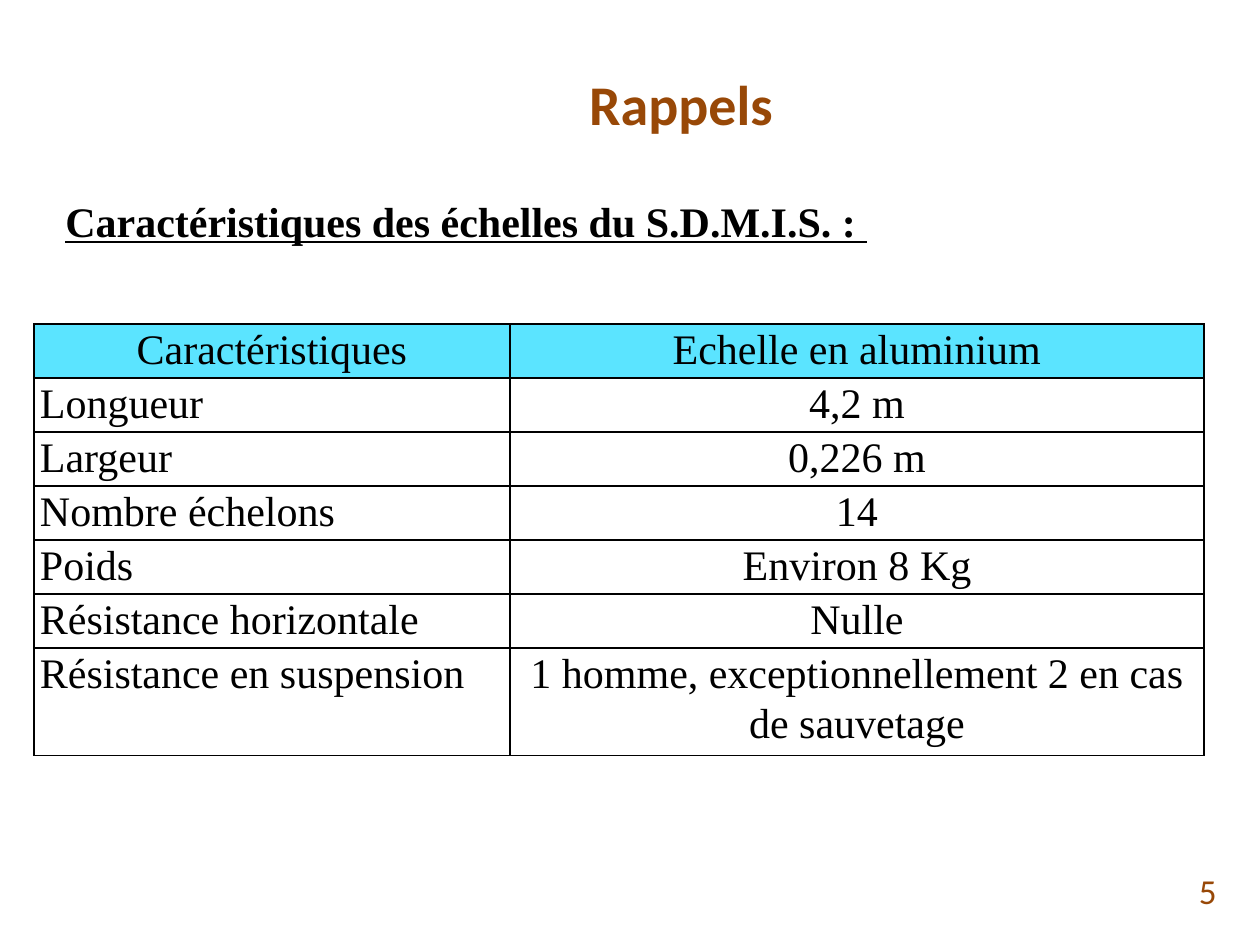
from lxml import etree
from pptx import Presentation
from pptx import util as u
from pptx.dml.color import RGBColor
from pptx.enum import text
from pptx.oxml.ns import qn

TITLE = "Rappels "
HEADING = "Caractéristiques des échelles du S.D.M.I.S. : "
NUMBER = "5"
ROWS = [
    ("Caractéristiques", "Echelle en aluminium"),
    ("Longueur", "4,2 m"),
    ("Largeur", "0,226 m"),
    ("Nombre échelons", "14"),
    ("Poids ", "Environ 8 Kg"),
    ("Résistance horizontale", "Nulle"),
    ("Résistance en suspension",
     "1 homme, exceptionnellement 2 en cas de sauvetage"),
]
COL_WIDTHS = (476, 694)
ROW_HEIGHT = 52
BROWN, BLACK, CYAN = "984807", "000000", "5BE4FF"
SERIF, SANS = "Times New Roman", "Calibri"
ALIGN, ANCHOR = text.PP_ALIGN, text.MSO_ANCHOR


def px(n):
    return u.Emu(round(n * 914400 / 126))


def color(value):
    return RGBColor.from_string(value)


def write(tf, words, size=24, font=SERIF, fill=BLACK, bold=False,
          underline=False, align=ALIGN.CENTER, anchor=ANCHOR.TOP,
          spacing=None, after=None):
    tf.word_wrap = True
    tf.vertical_anchor = anchor
    p = tf.paragraphs[0]
    p.alignment = align
    if spacing:
        p.line_spacing = spacing
    if after is not None:
        p.space_after = u.Pt(after)
    r = p.add_run()
    r.text = words
    r.font.size, r.font.name = u.Pt(size), font
    r.font.bold, r.font.underline = bold, underline
    r.font.color.rgb = color(fill)


def add_borders(cell, value=BLACK):
    tc_pr = cell._tc.get_or_add_tcPr()
    for i, side in enumerate(("lnL", "lnR", "lnT", "lnB")):
        ln = etree.Element(qn(f"a:{side}"), w=str(u.Pt(1)))
        fill = etree.SubElement(ln, qn("a:solidFill"))
        etree.SubElement(fill, qn("a:srgbClr"), val=value)
        tc_pr.insert(i, ln)


prs = Presentation()
prs.slide_width, prs.slide_height = px(1260), px(945)
s = prs.slides.add_slide(prs.slide_layouts[5])

# Title
title = s.shapes.title
title.left, title.top, title.width, title.height = map(px, (154, 38, 1067, 130))
write(title.text_frame, TITLE, size=32, font=SANS, fill=BROWN, bold=True,
      anchor=ANCHOR.MIDDLE)

# Slide number
box = s.shapes.add_textbox(*map(px, (935, 866, 294, 50)))
write(box.text_frame, NUMBER, size=20, font=SANS, fill=BROWN,
      align=ALIGN.RIGHT, anchor=ANCHOR.MIDDLE)

# Heading
box = s.shapes.add_textbox(*map(px, (53, 189, 1131, 64)))
write(box.text_frame, HEADING, bold=True, underline=True, align=ALIGN.JUSTIFY)

# Table: the last row is two lines high
heights = [ROW_HEIGHT] * (len(ROWS) - 1) + [2 * ROW_HEIGHT]
frame = s.shapes.add_table(len(ROWS), len(COL_WIDTHS), px(34), px(324),
                           px(sum(COL_WIDTHS)), px(sum(heights)))
table = frame.table
for col, width in zip(table.columns, COL_WIDTHS):
    col.width = px(width)
for i, (row, height) in enumerate(zip(ROWS, heights)):
    table.rows[i].height = px(height)
    for j, words in enumerate(row):
        cell = table.cell(i, j)
        cell.margin_left = cell.margin_right = px(6)
        cell.margin_top = cell.margin_bottom = 0
        if i == 0:
            cell.fill.solid()
            cell.fill.fore_color.rgb = color(CYAN)
        else:
            cell.fill.background()
        add_borders(cell)
        if i == 0 or j == 1:
            align = ALIGN.CENTER
        else:
            align = ALIGN.LEFT if i == len(ROWS) - 1 else ALIGN.JUSTIFY
        write(cell.text_frame, words, align=align, spacing=1.07, after=8)

prs.save("out.pptx")
